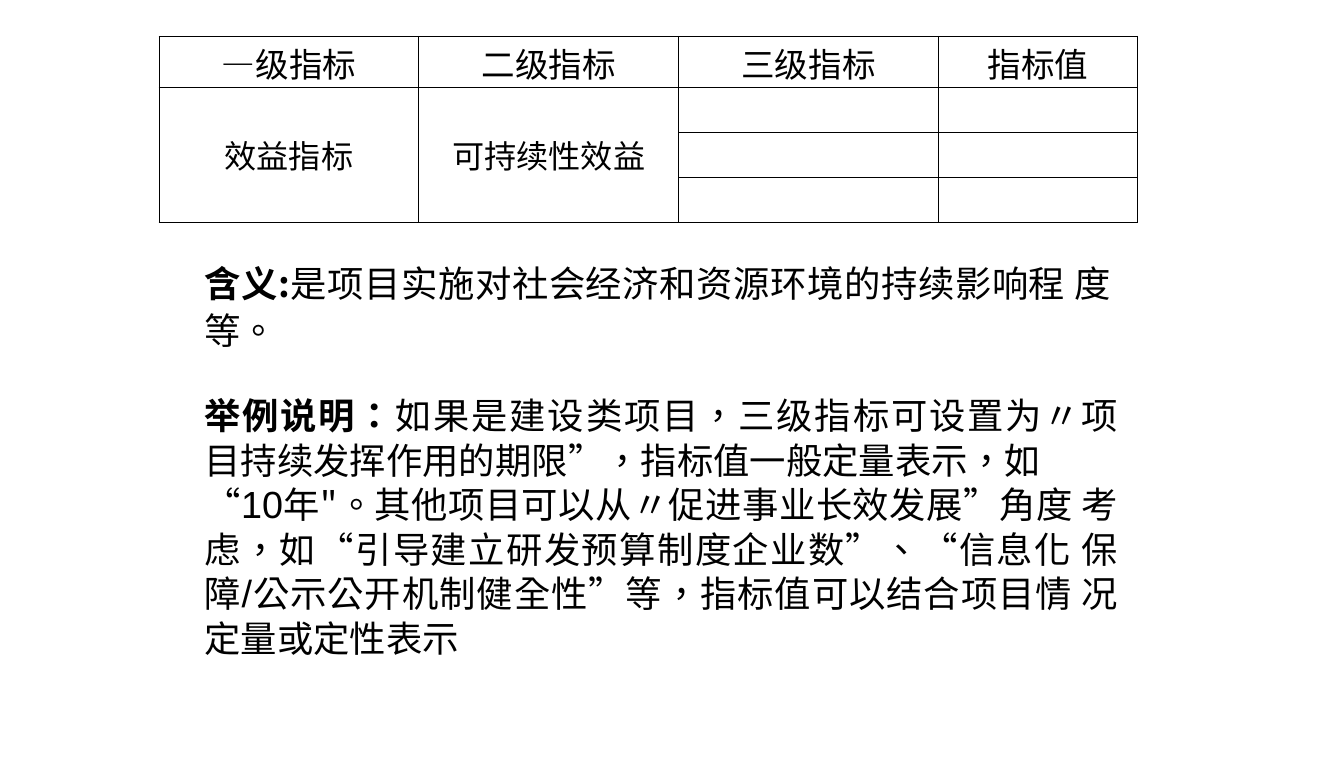
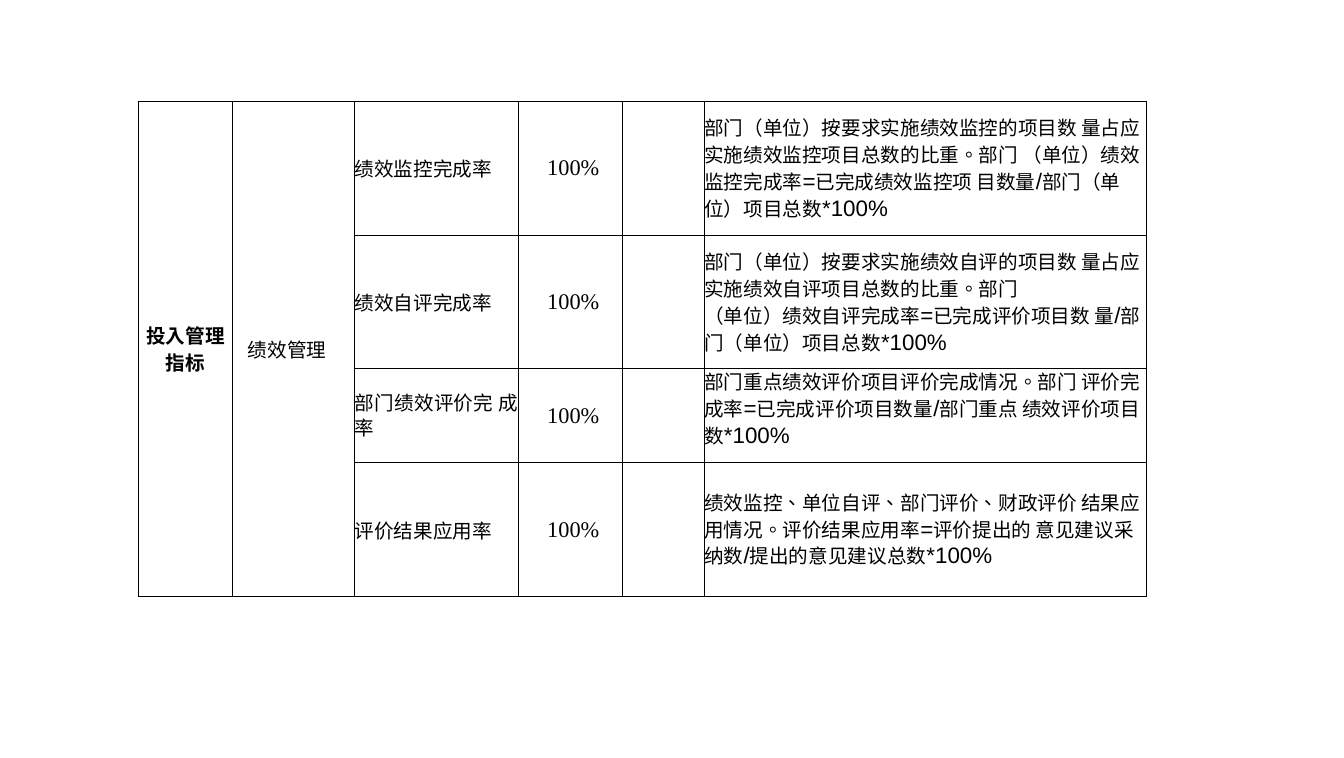
from itertools import groupby

from lxml import etree
from pptx import Presentation
from pptx import util as u
from pptx.dml.color import RGBColor
from pptx.enum import shapes, text
from pptx.oxml.ns import qn

INK, PAPER = "000000", "FFFFFF"
CJK, CJK_ALT, LATIN, SERIF = "Noto Sans CJK SC", "Noto Sans CJK TC", "Arial", "Times New Roman"
LATIN_CHARS = "0123456789=/*%"
ALIGN = {"left": text.PP_ALIGN.LEFT, "center": text.PP_ALIGN.CENTER, "justify": text.PP_ALIGN.JUSTIFY}
ANCHOR = {"top": text.MSO_ANCHOR.TOP, "middle": text.MSO_ANCHOR.MIDDLE, "bottom": text.MSO_ANCHOR.BOTTOM}

HEADERS = ["—级指标", "二级指标", "三级指标", "指标值"]
CATEGORIES = ["效益指标", "可持续性效益"]
NOTES = [
    ((146.16, 185.04, 649.1, 61.2), 33.1, "含义:",
     ["是项目实施对社会经济和资源环境的持续影响程 度等。"]),
    ((146.16, 280.8, 654.2, 189.36), 31.9, "举例说明：",
     ["如果是建设类项目，三级指标可设置为〃项 目持续发挥作用的期限”，指标值一般定量表示，如",
      "“10年\"。其他项目可以从〃促进事业长效发展”角度 考虑，如“引导建立研发预算制度企业数”、“信息化 保障"
      "/公示公开机制健全性”等，指标值可以结合项目情 况定量或定性表示"]),
]

GROUP, SUBGROUP = "投入管理 指标", "绩效管理"
INDICATORS = [
    ("绩效监控完成率", {},
     ["部门（单位）按要求实施绩效监控的项目数 量占应实施绩效监控项目总数的比重。部门 （单位）绩效监控完成率"
      "=已完成绩效监控项 目数量/部门（单位）项目总数*100%"], {"line": 19.4}),
    ("绩效自评完成率", {},
     ["部门（单位）按要求实施绩效自评的项目数 量占应实施绩效自评项目总数的比重。部门",
      "（单位）绩效自评完成率=已完成评价项目数 量/部门（单位）项目总数*100%"], {"line": 19.2}),
    ("部门绩效评价完 成率", {"line": 18},
     ["部门重点绩效评价项目评价完成情况。部门 评价完成率=已完成评价项目数量/部门重点 绩效评价项目数*100%"],
     {"line": 19.1, "before": 2.8, "anchor": "top"}),
    ("评价结果应用率", {},
     ["绩效监控、单位自评、部门评价、财政评价 结果应用情况。评价结果应用率"
      "=评价提出的 意见建议采纳数/提出的意见建议总数*100%"], {"line": 19.1}),
]


def color(value):
    return RGBColor.from_string(value)


def add_span(para, words, font, size, bold):
    span = para.add_run()
    span.text = words
    span.font.name, span.font.size, span.font.bold = font, u.Pt(size), bold
    span.font.color.rgb = color(INK)
    props = span.font._element
    props.set("lang", "zh-TW")
    etree.SubElement(props, qn("a:ea")).set("typeface", font)


def write(frame, paragraphs, size, latin_size=None, lead="", font=CJK, latin=LATIN,
          bold=False, align="left", line=None, before=0, indent=0):
    frame.word_wrap = True
    for index, words in enumerate(paragraphs):
        para = frame.add_paragraph() if index else frame.paragraphs[0]
        para.alignment = ALIGN[align]
        para.space_before = u.Pt(before)
        if line:
            para.line_spacing = u.Pt(line)
        if indent:
            props = para._p.get_or_add_pPr()
            props.set("marL", "0")
            props.set("indent", str(u.Pt(indent)))
        if lead and index == 0:
            add_span(para, lead, font, size, True)
        for is_latin, chars in groupby(words, lambda char: char in LATIN_CHARS):
            face, points = (latin, latin_size or size) if is_latin else (font, size)
            add_span(para, "".join(chars), face, points, bold)


def clear_margins(holder):
    holder.margin_left = holder.margin_right = holder.margin_top = holder.margin_bottom = 0


def fill_cell(cell, paragraphs, size, anchor="middle", **style):
    clear_margins(cell)
    cell.vertical_anchor = ANCHOR[anchor]
    write(cell.text_frame, paragraphs, size, **style)


def add_note(page, bounds, line, lead, paragraphs):
    box = page.shapes.add_shape(shapes.MSO_SHAPE.RECTANGLE, *map(u.Pt, bounds))
    box.shadow.inherit = False
    box.fill.solid()
    box.fill.fore_color.rgb = color(PAPER)
    box.line.fill.background()
    clear_margins(box.text_frame)
    box.text_frame.vertical_anchor = ANCHOR["top"]
    write(box.text_frame, paragraphs, 26, 27, lead=lead, align="justify", line=line)


def add_grid(page, left, top, widths, heights):
    frame = page.shapes.add_table(len(heights), len(widths), u.Pt(left), u.Pt(top),
                                  u.Pt(sum(widths)), u.Pt(sum(heights)))
    table = frame.table
    table.first_row = table.horz_banding = False
    for column, width in zip(table.columns, widths):
        column.width = u.Pt(width)
    for row, height in zip(table.rows, heights):
        row.height = u.Pt(height)
    for cell in table.iter_cells():
        cell.fill.background()
        props = cell._tc.get_or_add_tcPr()
        for index, side in enumerate(("lnL", "lnR", "lnT", "lnB")):
            border = etree.Element(qn(f"a:{side}"), w=str(u.Pt(0.75)))
            solid = etree.SubElement(border, qn("a:solidFill"))
            etree.SubElement(solid, qn("a:srgbClr")).set("val", INK)
            props.insert(index, border)
    return table


def merge_down(table, column, first_row):
    cell = table.cell(first_row, column)
    cell.merge(table.cell(len(table.rows) - 1, column))
    return cell


def build_sustainability(page):
    table = add_grid(page, 113.8, 26, [185.8, 185.8, 185.8, 142.4], [36.3, 32.2, 32.2, 32.4])
    for column, header in enumerate(HEADERS):
        fill_cell(table.cell(0, column), [header], 24, anchor="bottom", align="center")
    for column, category in enumerate(CATEGORIES):
        fill_cell(merge_down(table, column, 1), [category], 23, font=CJK_ALT, align="center")
    for note in NOTES:
        add_note(page, *note)


def build_indicators(page):
    table = add_grid(page, 99, 72.6, [67.5, 87.1, 116.9, 74.4, 58.9, 316], [95.7, 95.6, 67, 95.8])
    fill_cell(merge_down(table, 0, 0), [GROUP], 14, bold=True, align="center", line=19.2)
    fill_cell(merge_down(table, 1, 0), [SUBGROUP], 14, indent=10.8)
    for row, (name, name_style, details, detail_style) in enumerate(INDICATORS):
        fill_cell(table.cell(row, 2), [name], 14, align="justify", **name_style)
        fill_cell(table.cell(row, 3), ["100%"], 16, latin=SERIF, indent=20.9)
        fill_cell(table.cell(row, 5), details, 14, latin_size=16, **detail_style)


def main():
    deck = Presentation()
    deck.slide_width, deck.slide_height = u.Pt(961.2), u.Pt(542.16)
    for build in (build_sustainability, build_indicators):
        build(deck.slides.add_slide(deck.slide_layouts[6]))
    deck.save("out.pptx")


if __name__ == "__main__":
    main()
